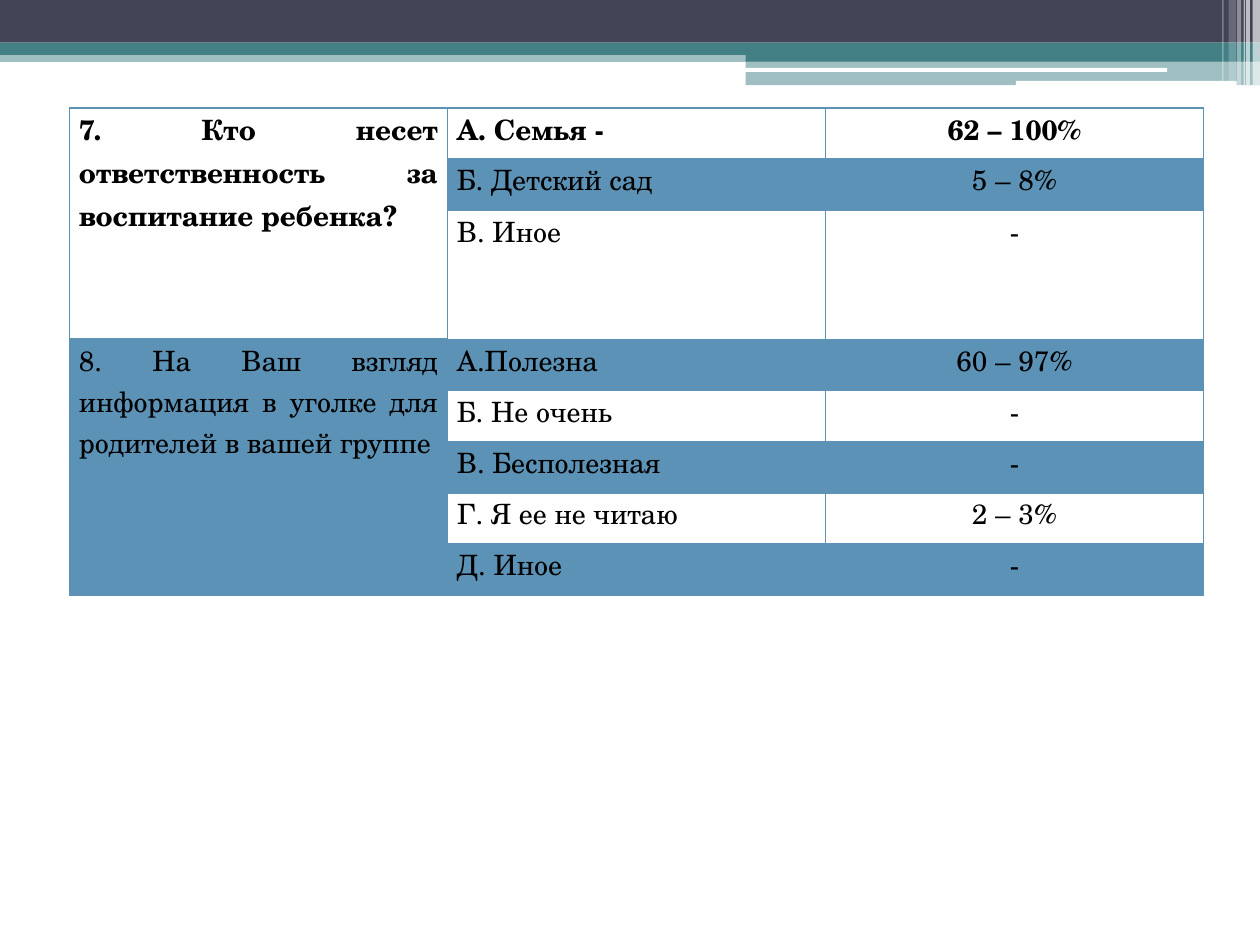
from lxml import etree
from pptx import Presentation
from pptx.dml.color import RGBColor
from pptx.enum.shapes import MSO_SHAPE
from pptx.enum.text import PP_ALIGN
from pptx.oxml.ns import qn
from pptx.util import Cm, Pt

RECT, ROUNDED = MSO_SHAPE.RECTANGLE, MSO_SHAPE.ROUNDED_RECTANGLE
JUSTIFY, CENTER = PP_ALIGN.JUSTIFY, PP_ALIGN.CENTER
FONT = "TeX Gyre Schola"
COLORS = {"slate": "424456", "teal": "438086", "white": "FFFFFF",
          "black": "000000", "blue": "5C92B5"}

HEADER_BARS = [
    (0, 1.02, 25.4, 0.23, RECT, "teal", 50),
    (0, 0, 25.4, 0.86, RECT, "slate", 100),
    (0, 0.86, 25.4, 0.25, RECT, "teal", 100),
    (15.03, 0.99, 10.37, 0.25, RECT, "teal", 100),
    (15.03, 1.22, 10.37, 0.5, RECT, "teal", 50),
    (15.02, 1.37, 8.51, 0.08, ROUNDED, "white", 100),
    (20.48, 1.63, 4.45, 0.1, ROUNDED, "white", 100),
]
STRIPES = [
    (25.25, 0.15, 1.72, 65), (25.12, 0.08, 1.72, 65), (25.07, 0.03, 1.72, 60),
    (24.94, 0.08, 1.72, 40), (24.77, 0.15, 1.63, 20), (24.64, 0.03, 1.63, 30),
]
SURVEY = [
    ("7. Кто несет ответственность за воспитание ребенка?",
     [("А. Семья -", "62 – 100%"), ("Б. Детский сад ", "5 – 8%"),
      ("В. Иное ", "-")]),
    ("8. На Ваш взгляд информация в уголке для родителей в вашей группе",
     [("А.Полезна ", "60 – 97%"), ("Б. Не очень ", "-"),
      ("В. Бесполезная ", "-"), ("Г. Я ее не читаю ", "2 – 3%"),
      ("Д. Иное ", "-")]),
]


def paint(fill, color, opacity=100):
    """Fill with a solid colour at an opacity in percent."""
    fill.solid()
    fill.fore_color.rgb = RGBColor.from_string(COLORS[color])
    if opacity < 100:
        rgb = fill._xPr.find(".//" + qn("a:srgbClr"))
        etree.SubElement(rgb, qn("a:alpha"), val=str(opacity * 1000))


def add_bar(slide, left, top, width, height, preset, color, opacity):
    """Add one flat bar of the header decoration."""
    bar = slide.shapes.add_shape(preset, Cm(left), Cm(top), Cm(width), Cm(height))
    bar.shadow.inherit = False
    bar.line.fill.background()
    paint(bar.fill, color, opacity)


def write(frame, text, align=JUSTIFY, bold=False, size=16, color="black"):
    """Write one formatted paragraph into a text frame."""
    paragraph = frame.paragraphs[0]
    paragraph.alignment = align
    run = paragraph.add_run()
    run.text = text
    run.font.name, run.font.size, run.font.bold = FONT, Pt(size), bold
    run.font.color.rgb = RGBColor.from_string(COLORS[color])


def style_cell(cell, shaded, thick_bottom):
    """Set margins, borders and the band colour of a cell."""
    cell.margin_left = cell.margin_right = Cm(0.19)
    cell.margin_top = cell.margin_bottom = 0
    properties = cell._tc.get_or_add_tcPr()
    for side in "LRTB":
        width = Pt(2 if side == "B" and thick_bottom else 1)
        border = etree.SubElement(properties, qn("a:ln" + side), w=str(width))
        solid = etree.SubElement(border, qn("a:solidFill"))
        etree.SubElement(solid, qn("a:srgbClr"), val=COLORS["blue"])
    if shaded:
        paint(cell.fill, "blue", 20)
    else:
        cell.fill.background()


def add_survey(slide):
    """Add the table of questions, answers and shares."""
    row_count = sum(len(answers) for _, answers in SURVEY)
    table = slide.shapes.add_table(row_count, 3, Cm(1.4), Cm(2.18), Cm(22.86),
                                   Cm(1.03 * row_count)).table
    table.first_row = table.horz_banding = False
    for row in table.rows:
        row.height = Cm(1.03)

    first = 0
    for question, answers in SURVEY:
        last = first + len(answers) - 1
        for row, (answer, share) in enumerate(answers, first):
            bold = row == 0
            style_cell(table.cell(row, 0), first % 2 == 1, first == 0)
            for column in (1, 2):
                style_cell(table.cell(row, column), row % 2 == 1, bold)
            write(table.cell(row, 1).text_frame, answer, bold=bold)
            write(table.cell(row, 2).text_frame, share, align=CENTER, bold=bold)
        table.cell(first, 0).merge(table.cell(last, 0))
        write(table.cell(first, 0).text_frame, question, bold=first == 0)
        first = last + 1


def main():
    """Build and save the survey slide."""
    deck = Presentation()
    deck.slide_width, deck.slide_height = Cm(25.4), Cm(19.05)
    slide = deck.slides.add_slide(deck.slide_layouts[6])
    for bar in HEADER_BARS:
        add_bar(slide, *bar)
    for left, width, height, opacity in STRIPES:
        add_bar(slide, left, 0, width, height, RECT, "white", opacity)
    add_survey(slide)
    deck.save("out.pptx")


if __name__ == "__main__":
    main()
